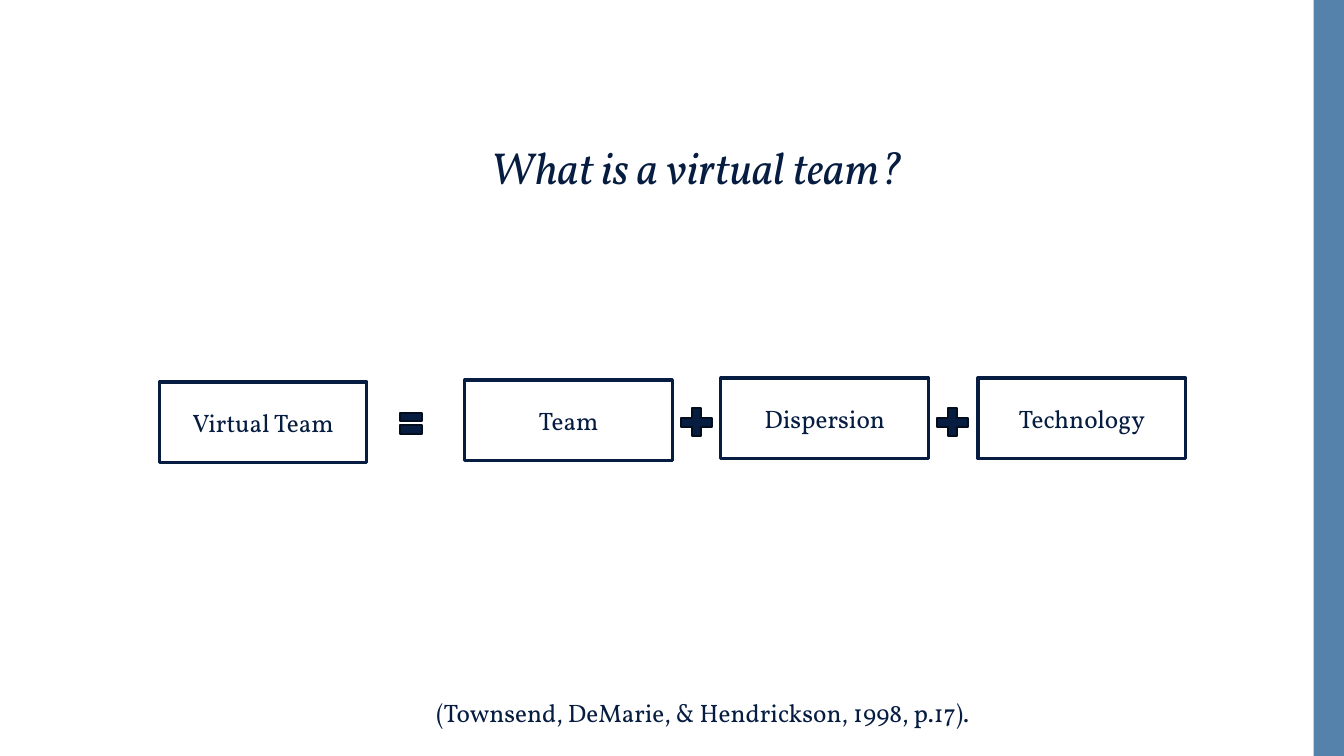
from dataclasses import dataclass

import pptx
import pptx.dml.color
import pptx.enum.shapes
import pptx.enum.text
import pptx.util

Inches = pptx.util.Inches
Shapes = pptx.enum.shapes.MSO_SHAPE
Align = pptx.enum.text.PP_ALIGN
Anchor = pptx.enum.text.MSO_ANCHOR


@dataclass(frozen=True)
class Theme:
    font: str = "Vollkorn"
    navy: str = "061D41"
    dark: str = "030D1C"
    stripe: str = "5482AB"
    white: str = "FFFFFF"
    title_size: int = 32
    body_size: int = 18


THEME = Theme()


def color(value):
    return pptx.dml.color.RGBColor.from_string(value)


def write_text(frame, text, size=THEME.body_size, italic=False, align=Align.CENTER,
               anchor=Anchor.MIDDLE, wrap=True, spacing=None):
    frame.word_wrap = wrap
    frame.vertical_anchor = anchor
    paragraph = frame.paragraphs[0]
    paragraph.alignment = align
    paragraph.line_spacing = spacing
    run = paragraph.add_run()
    run.text = text
    run.font.name = THEME.font
    run.font.size = pptx.util.Pt(size)
    run.font.italic = italic
    run.font.color.rgb = color(THEME.navy)


def add_shape(slide, kind, left, top, width, height, fill, line=None, line_width=0):
    shape = slide.shapes.add_shape(
        kind, Inches(left), Inches(top), Inches(width), Inches(height))
    shape.shadow.inherit = False
    shape.fill.solid()
    shape.fill.fore_color.rgb = color(fill)
    if line:
        shape.line.color.rgb = color(line)
        shape.line.width = pptx.util.Pt(line_width)
    else:
        shape.line.fill.background()
    return shape


def add_term(slide, text, left, top):
    box = add_shape(slide, Shapes.RECTANGLE, left, top, 2.06, 0.8,
                    THEME.white, THEME.navy, 2.25)
    write_text(box.text_frame, text)


def add_operator(slide, kind, left, top, width, height):
    add_shape(slide, kind, left, top, width, height, THEME.navy, THEME.dark, 1.5)


def add_title(slide, text):
    title = slide.shapes.title
    title.left, title.top = Inches(1.16), Inches(1.4)
    title.width, title.height = Inches(11.5), Inches(1.45)
    write_text(title.text_frame, text, size=THEME.title_size, italic=True,
               anchor=Anchor.TOP, spacing=0.9)


def add_citation(slide, text):
    box = slide.shapes.add_textbox(Inches(4.23), Inches(6.87), Inches(5.82), Inches(0.4))
    write_text(box.text_frame, text, align=Align.LEFT, anchor=Anchor.TOP, wrap=False)
    box.text_frame.auto_size = pptx.enum.text.MSO_AUTO_SIZE.SHAPE_TO_FIT_TEXT


def main():
    presentation = pptx.Presentation()
    presentation.slide_width = Inches(13.33)
    presentation.slide_height = Inches(7.5)
    slide = presentation.slides.add_slide(presentation.slide_layouts[5])

    # Side stripe and title
    add_shape(slide, Shapes.RECTANGLE, 13.03, 0, 0.3, 7.5, THEME.stripe)
    add_title(slide, "What is a virtual team?")

    # Equation: the terms
    for text, left, top in (("Virtual Team", 1.58, 3.79), ("Team", 4.61, 3.77),
                            ("Dispersion", 7.15, 3.75), ("Technology", 9.7, 3.75)):
        add_term(slide, text, left, top)

    # Equation: the signs between them
    add_operator(slide, Shapes.MATH_EQUAL, 3.93, 4.02, 0.29, 0.36)
    for left in (6.7, 9.24):
        add_operator(slide, Shapes.MATH_PLUS, left, 4, 0.42, 0.38)

    # Source of the definition
    add_citation(slide, "(Townsend, DeMarie, & Hendrickson, 1998, p.17).")

    presentation.save("out.pptx")


if __name__ == "__main__":
    main()
